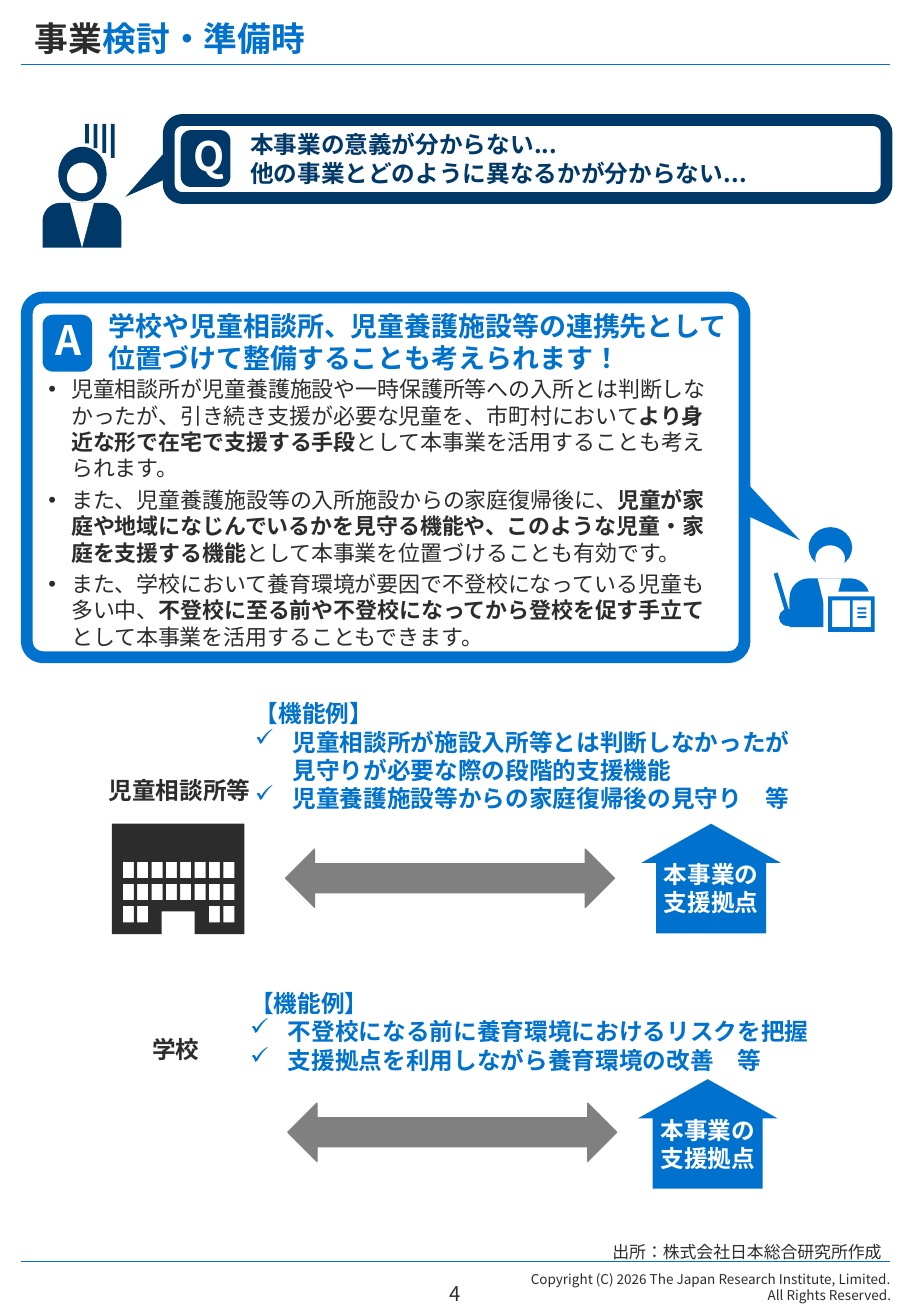
from dataclasses import dataclass

from lxml import etree
from pptx import Presentation
from pptx.dml.color import RGBColor
from pptx.enum.lang import MSO_LANGUAGE_ID
from pptx.enum.shapes import MSO_CONNECTOR, MSO_SHAPE
from pptx.enum.text import MSO_ANCHOR, MSO_AUTO_SIZE, PP_ALIGN
from pptx.oxml.ns import qn
from pptx.util import Cm, Pt

STRAIGHT = MSO_CONNECTOR.STRAIGHT
RECTANGLE, ROUNDED, OVAL = MSO_SHAPE.RECTANGLE, MSO_SHAPE.ROUNDED_RECTANGLE, MSO_SHAPE.OVAL
SHOULDERS, CHORD_TOP = MSO_SHAPE.ROUND_2_SAME_RECTANGLE, MSO_SHAPE.FLOWCHART_MERGE
TRIANGLE, TWO_WAY_ARROW = MSO_SHAPE.ISOSCELES_TRIANGLE, MSO_SHAPE.LEFT_RIGHT_ARROW
LEFT, CENTER, RIGHT = PP_ALIGN.LEFT, PP_ALIGN.CENTER, PP_ALIGN.RIGHT
TOP, MIDDLE, BOTTOM = MSO_ANCHOR.TOP, MSO_ANCHOR.MIDDLE, MSO_ANCHOR.BOTTOM
NO_AUTOFIT, JAPANESE = MSO_AUTO_SIZE.NONE, MSO_LANGUAGE_ID.JAPANESE
FONT = "Noto Sans CJK JP"
BLUE, NAVY, INK, WHITE, GRAY = "0072CE", "003967", "2C2C2C", "FFFFFF", "808080"

Box = tuple[float, float, float, float]
Point = tuple[float, float]


@dataclass
class Span:
    text: str
    color: str = INK
    bold: bool = False


@dataclass
class Para:
    spans: list[Span]
    bullet: str = ""


@dataclass
class Style:
    size: float
    align: int = LEFT
    anchor: int = MIDDLE
    wrap: bool = True
    insets: Box = (0.2, 0.1, 0.2, 0.1)
    indent: float = 0
    after: float = 0
    spacing: float = 1.0


@dataclass
class Bubble:
    letter: str
    color: str
    tail: Box
    turn: float
    frame: Box
    radius: float
    badge: Point
    heading: Box
    size: float
    paras: list[str]


@dataclass
class Partner:
    name: str
    label: Point
    features: Point
    house: Point
    arrow: Point
    functions: list[str]


@dataclass
class Person:
    color: str
    hair: Box
    face: Box
    body: Box


def rgb(color: str) -> RGBColor:
    return RGBColor.from_string(color)


def lines(texts: list[str], color: str = INK, bold: bool = False) -> list[Para]:
    return [Para([Span(text, color, bold)]) for text in texts]


def write(shape, paras: list[Para], style: Style) -> None:
    frame = shape.text_frame
    frame.auto_size = NO_AUTOFIT
    frame.word_wrap = style.wrap
    frame.vertical_anchor = style.anchor
    frame.margin_left, frame.margin_top, frame.margin_right, frame.margin_bottom = map(Cm, style.insets)
    for index, item in enumerate(paras):
        para = frame.add_paragraph() if index else frame.paragraphs[0]
        properties = para._p.get_or_add_pPr()
        indent = Cm(style.indent) if item.bullet else 0
        properties.set("marL", str(indent))
        properties.set("indent", str(-indent))
        mark = etree.SubElement(properties, qn("a:buChar" if item.bullet else "a:buNone"))
        if item.bullet:
            mark.set("char", item.bullet)
        para.alignment, para.line_spacing = style.align, style.spacing
        para.space_before, para.space_after = Pt(0), Pt(style.after)
        for span in item.spans:
            for row, text in enumerate(span.text.split("\n")):
                if row:
                    para.add_line_break()
                run = para.add_run()
                run.text = text
                font = run.font
                font.size, font.bold, font.name = Pt(style.size), span.bold, FONT
                font.color.rgb, font.language_id = rgb(span.color), JAPANESE
                etree.SubElement(run._r.get_or_add_rPr(), qn("a:ea")).set("typeface", FONT)


def add_text(page, box: Box, paras: list[Para], style: Style) -> None:
    write(page.shapes.add_textbox(*map(Cm, box)), paras, style)


def paint(shape, fill: str, line: str = "", width: float = 0) -> None:
    shape.shadow.inherit = False
    shape.fill.solid()
    shape.fill.fore_color.rgb = rgb(fill)
    if line:
        shape.line.color.rgb = rgb(line)
        shape.line.width = Pt(width)
    else:
        shape.line.fill.background()


def add_block(page, kind: int, box: Box, fill: str, line: str = "", width: float = 0):
    shape = page.shapes.add_shape(kind, *map(Cm, box))
    paint(shape, fill, line, width)
    return shape


def add_line(page, start: Point, end: Point, width: float) -> None:
    line = page.shapes.add_connector(STRAIGHT, *map(Cm, start + end))
    line.line.color.rgb = rgb(BLUE)
    line.line.width = Pt(width)
    etree.SubElement(line._element.spPr, qn("a:effectLst"))


def add_outline(page, place: Point, contours: list[list[Point]], fill: str):
    builder = page.shapes.build_freeform(*contours[0][0], scale=Cm(0.01))
    for index, contour in enumerate(contours):
        if index:
            builder.move_to(*contour[0])
        builder.add_line_segments(contour[1:], close=True)
    shape = builder.convert_to_shape(*map(Cm, place))
    paint(shape, fill)
    return shape


def pane(x: float, y: float, width: float, height: float) -> list[Point]:
    return [(x, y), (x, y + height), (x + width, y + height), (x + width, y)]


WOMAN = Person(NAVY, (1.22, 3.07, 1.01, 1.14), (1.4, 3.4, 0.64, 0.64), (0.89, 4.24, 1.65, 0.94))
TEACHER = Person(BLUE, (16.91, 11.02, 0.91, 0.85), (17.05, 11.4, 0.62, 0.57), (16.51, 12.09, 1.68, 1.02))
BOOK = [pane(0, 0, 97, 74), pane(8, 8, 38, 56), pane(51, 8, 38, 56)] + [
    pane(61, 23 + 9 * row, 19, 4) for row in range(3)]
HOUSE = [[(146, 0), (292, 82), (261, 82), (261, 229), (31, 229), (31, 82), (0, 82)]]
OFFICE = [[(0, 0), (277, 0), (277, 231), (173, 231), (173, 183), (104, 183), (104, 231), (0, 231)]] + [
    pane(23 + 30 * column, 80 + 46 * row, 23, 34)
    for row in range(3) for column in range(8) if row < 2 or column in (0, 1, 6, 7)]

BUBBLES = [
    Bubble("Q", NAVY, (2.9, 2.92, 0.66, 1.5), 233.9, (3.53, 2.51, 15.01, 1.63), 0.173, (3.78, 2.72),
           (5.03, 2.72, 13.03, 1.19), 14, ["本事業の意義が分からない...", "他の事業とどのように異なるかが分からない..."]),
    Bubble("A", BLUE, (15.72, 9.96, 0.66, 1.68), 126.1, (0.56, 6.22, 15.01, 7.52), 0.045, (0.89, 6.58),
           (2.08, 6.55, 13.82, 1.19), 16, ["学校や児童相談所、児童養護施設等の連携先として\n位置づけて整備することも考えられます！"]),
]
ANSWERS = [
    ("児童相談所が児童養護施設や一時保護所等への入所とは判断しなかったが、引き続き支援が必要な児童を、市町村において",
     "より身近な形で在宅で支援する手段", "として本事業を活用することも考えられます。"),
    ("また、児童養護施設等の入所施設からの家庭復帰後に、",
     "児童が家庭や地域になじんでいるかを見守る機能や、このような児童・家庭を支援する機能",
     "として本事業を位置づけることも有効です。"),
    ("また、学校において養育環境が要因で不登校になっている児童も多い中、",
     "不登校に至る前や不登校になってから登校を促す手立て", "として本事業を活用することもできます。"),
]
PARTNERS = [
    Partner("学校", (2.41, 21.39), (5.03, 20.29), (13.34, 22.56), (6.02, 23.06),
            ["不登校になる前に養育環境におけるリスクを把握", "支援拠点を利用しながら養育環境の改善　等"]),
    Partner("児童相談所等", (2.49, 15.98), (5.13, 14.53), (13.41, 17.22), (5.97, 17.75),
            ["児童相談所が施設入所等とは判断しなかったが\n見守りが必要な際の段階的支援機能",
             "児童養護施設等からの家庭復帰後の見守り　等"]),
]


def add_bubble(page, bubble: Bubble) -> None:
    add_block(page, TRIANGLE, bubble.tail, bubble.color).rotation = bubble.turn
    add_block(page, ROUNDED, bubble.frame, WHITE, bubble.color, 7).adjustments[0] = bubble.radius
    badge = add_block(page, ROUNDED, (*bubble.badge, 1.04, 1.19), bubble.color)
    badge.adjustments[0] = 0.208
    write(badge, lines([bubble.letter], WHITE, True), Style(24, CENTER, BOTTOM))
    add_text(page, bubble.heading, lines(bubble.paras, bubble.color, True), Style(bubble.size))


def add_person(page, person: Person) -> None:
    left, top, width, height = person.body
    add_block(page, SHOULDERS, person.body, person.color).adjustments[0] = 0.4
    add_block(page, CHORD_TOP, (left + width / 2 - 0.25, top, 0.5, height), WHITE)
    add_block(page, OVAL, person.hair, person.color)
    add_block(page, OVAL, person.face, WHITE)


def add_partner(page, partner: Partner) -> None:
    add_text(page, (*partner.label, 2.54, 1.07), lines([partner.name], INK, True), Style(14, CENTER, wrap=False))
    house = add_outline(page, partner.house, HOUSE, BLUE)
    write(house, lines(["本事業の", "支援拠点"], WHITE, True), Style(14, CENTER, wrap=False, insets=(0, 0.41, 0, 0)))
    checks = [Para([Span(text, BLUE, True)], "✓") for text in partner.functions]
    add_text(page, (*partner.features, 10.01, 2.54), lines(["【機能例】"], BLUE, True) + checks,
             Style(14, wrap=False, indent=0.79))
    add_block(page, TWO_WAY_ARROW, (*partner.arrow, 6.88, 1.22), GRAY, GRAY, 0.75)


def place(holder, box: Box) -> None:
    holder.left, holder.top, holder.width, holder.height = map(Cm, box)


def main() -> None:
    deck = Presentation()
    deck.slide_width, deck.slide_height = Cm(19.05), Cm(27.51)
    page = deck.slides.add_slide(deck.slide_layouts[1])
    title, body = page.placeholders
    place(title, (0.43, 0.36, 18.21, 0.99))
    write(title, [Para([Span("事業", INK, True), Span("検討・準備時", BLUE, True)])],
          Style(20, insets=(0.3, 0.1, 0.3, 0.1), spacing=0.9))
    for y, width in ((26.37, 0.5), (1.35, 1)):
        add_line(page, (0.43, y), (18.62, y), width)
    add_text(page, (9.78, 26.37, 8.86, 0.94),
             lines(["Copyright (C) 2026 The Japan Research Institute, Limited.", "All Rights Reserved."]),
             Style(8, RIGHT, TOP, False, (0, 0.2, 0, 0)))
    add_text(page, (8.64, 26.54, 1.75, 1.04), lines(["4"]), Style(12, CENTER, spacing=0.9))
    for index in range(4):
        add_block(page, RECTANGLE, (1.78 + 0.18 * index, 2.59, 0.08, 0.41 + 0.1 * index), NAVY)
    for bubble in BUBBLES:
        add_bubble(page, bubble)
    place(body, (0.81, 8, 14.48, 5.44))
    write(body, [Para([Span(start), Span(key, bold=True), Span(end)], "•") for start, key, end in ANSWERS],
          Style(13, insets=(0.2, 0, 0.2, 0), indent=0.48, after=3))
    page.shapes._spTree.append(body._element)
    for person in (WOMAN, TEACHER):
        add_person(page, person)
    add_line(page, (16.22, 11.98), (16.48, 12.85), 2.5)
    add_block(page, OVAL, (16.29, 12.73, 0.36, 0.36), BLUE)
    add_block(page, RECTANGLE, (17.22, 12.37, 1.17, 0.94), WHITE)
    add_outline(page, (17.32, 12.47), BOOK, BLUE)
    for partner in PARTNERS:
        add_partner(page, partner)
    add_outline(page, (2.34, 17.22), OFFICE, INK)
    add_text(page, (9.47, 25.96, 9.14, 0.41), lines(["出所：株式会社日本総合研究所作成"]),
             Style(10, RIGHT, wrap=False, insets=(0.18, 0.1, 0.18, 0.1)))
    deck.save("out.pptx")


if __name__ == "__main__":
    main()
